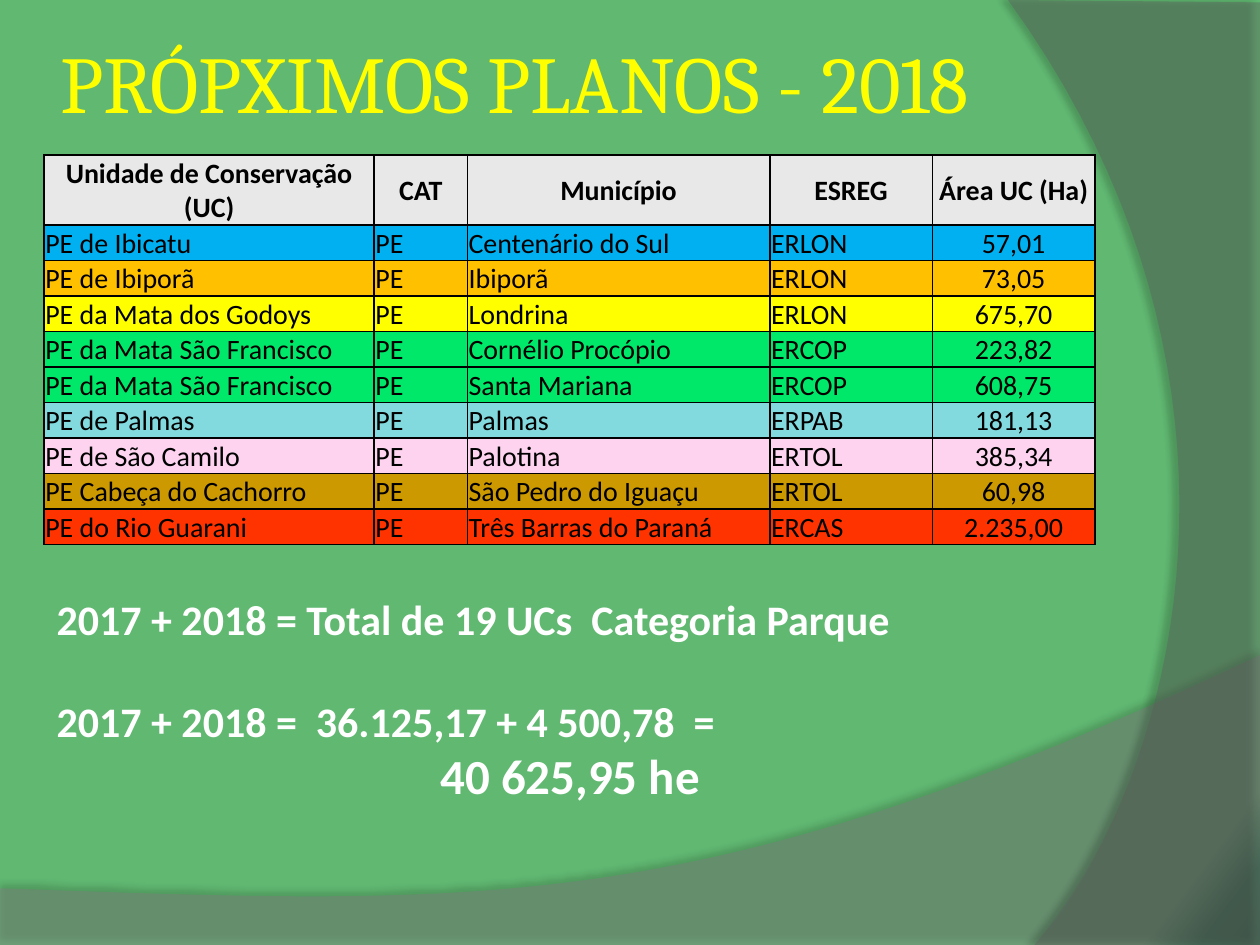
from dataclasses import dataclass

from lxml.etree import SubElement
from pptx import Presentation
from pptx.dml.color import RGBColor
from pptx.enum.text import MSO_ANCHOR, PP_ALIGN
from pptx.oxml import parse_xml
from pptx.oxml.ns import qn
from pptx.util import Pt

DRAW = "http://schemas.openxmlformats.org/drawingml/2006/main"


@dataclass(frozen=True)
class Theme:
    ground: tuple = ((0, "005928"), (3, "006A30"), (6, "60B871"))
    wave: str = "7F7F7F"
    side: str = "5E5E5E"
    dark: str = "000000"
    light: str = "FFFFFF"
    gold: str = "FFFF00"
    head: str = "E8E8E8"
    serif: str = "Cambria"
    sans: str = "Calibri"
    title: int = 46
    cell: int = 16
    note: int = 24
    total: int = 28


def write(par, text, *, size, color, font, bold=False, align=PP_ALIGN.LEFT, before=0):
    par.alignment = align
    par.space_before = Pt(before)
    run = par.add_run()
    run.text = text
    run.font.size = Pt(size)
    run.font.name = font
    run.font.bold = bold
    run.font.color.rgb = RGBColor.from_string(color)


def curve(start, one, two, end, steps=40):
    points = []
    for step in range(steps + 1):
        t = step / steps
        u = 1 - t
        points.append(tuple(
            u**3 * a + 3 * u * u * t * b + 3 * u * t * t * c + t**3 * d
            for a, b, c, d in zip(start, one, two, end)
        ))
    return points


def tint(parent, color, alpha=100):
    node = SubElement(parent, qn("a:srgbClr"), val=color)
    SubElement(node, qn("a:alpha"), val=str(alpha * 1000))


class Board:
    """Draws styled elements on the current slide."""

    def __init__(self, slide, theme):
        self.slide = slide
        self.theme = theme

    def ground(self, angle):
        stops = "".join(
            f'<a:gs pos="{pos * 1000}"><a:srgbClr val="{color}"/></a:gs>'
            for pos, color in self.theme.ground
        )
        fill = self.slide.background.fill
        fill.solid()
        old = self.slide.background._cSld.bg.bgPr.find(qn("a:solidFill"))
        old.getparent().replace(old, parse_xml(
            f'<a:gradFill xmlns:a="{DRAW}" rotWithShape="1"><a:gsLst>{stops}</a:gsLst>'
            f'<a:lin ang="{angle * 60000}" scaled="0"/></a:gradFill>'
        ))

    def sweep(self, points, color, alpha, shade, gap, angle):
        spots = [(Pt(x), Pt(y)) for x, y in points]
        path = self.slide.shapes.build_freeform(*spots[0])
        path.add_line_segments(spots[1:], close=True)
        shape = path.convert_to_shape()
        shape.fill.solid()
        shape.fill.fore_color.rgb = RGBColor.from_string(color)
        shape.line.fill.background()
        shape.shadow.inherit = False
        props = shape._element.spPr
        base = props.find(qn("a:solidFill")).find(qn("a:srgbClr"))
        SubElement(base, qn("a:alpha"), val=str(alpha * 1000))
        glow = SubElement(
            props.find(qn("a:effectLst")), qn("a:outerShdw"),
            blurRad=str(Pt(4)), dist=str(Pt(gap)), dir=str(angle * 60000),
            algn="ctr", rotWithShape="0",
        )
        tint(glow, self.theme.dark, shade)

    def box(self, left, top, width, height, lines, anchor=MSO_ANCHOR.TOP, inset=(7.2, 3.6)):
        frame = self.slide.shapes.add_textbox(
            Pt(left), Pt(top), Pt(width), Pt(height)
        ).text_frame
        frame.word_wrap = True
        frame.vertical_anchor = anchor
        frame.margin_left = frame.margin_right = Pt(inset[0])
        frame.margin_top = frame.margin_bottom = Pt(inset[1])
        for index, (text, style) in enumerate(lines):
            par = frame.add_paragraph() if index else frame.paragraphs[0]
            write(par, text, **style)

    def cell(self, cell, text, fill, bold, align):
        props = cell._tc.get_or_add_tcPr()
        for side in ("lnL", "lnR", "lnT", "lnB"):
            line = SubElement(props, qn(f"a:{side}"), w=str(Pt(1)))
            tint(SubElement(line, qn("a:solidFill")), self.theme.dark)
        cell.fill.solid()
        cell.fill.fore_color.rgb = RGBColor.from_string(fill)
        cell.vertical_anchor = MSO_ANCHOR.MIDDLE
        cell.margin_left = cell.margin_right = cell.margin_top = Pt(0.72)
        cell.margin_bottom = Pt(0)
        write(cell.text_frame.paragraphs[0], text, size=self.theme.cell,
              color=self.theme.dark, font=self.theme.sans, bold=bold, align=align)

    def table(self, left, top, widths, heights, rows, fills):
        table = self.slide.shapes.add_table(
            len(rows), len(widths), Pt(left), Pt(top), Pt(sum(widths)), Pt(sum(heights))
        ).table
        table.first_row = table.horz_banding = False
        for col, width in zip(table.columns, widths):
            col.width = Pt(width)
        for row, height in zip(table.rows, heights):
            row.height = Pt(height)
        for r, (row, fill) in enumerate(zip(rows, fills)):
            for c, text in enumerate(row):
                mid = r == 0 or c == len(row) - 1
                align = PP_ALIGN.CENTER if mid else PP_ALIGN.LEFT
                self.cell(table.cell(r, c), text, fill, r == 0, align)


HEAD = ("Unidade de Conservação (UC)", "CAT", "Município", "ESREG", "Área UC (Ha)")
PARKS = (
    ("PE de Ibicatu", "Centenário do Sul", "ERLON", "57,01", "00B0F0"),
    ("PE de Ibiporã", "Ibiporã", "ERLON", "73,05", "FFC000"),
    ("PE da Mata dos Godoys", "Londrina", "ERLON", "675,70", "FFFF00"),
    ("PE da Mata São Francisco", "Cornélio Procópio", "ERCOP", "223,82", "00E869"),
    ("PE da Mata São Francisco", "Santa Mariana", "ERCOP", "608,75", "00E869"),
    ("PE de Palmas", "Palmas", "ERPAB", "181,13", "82DADE"),
    ("PE de São Camilo", "Palotina", "ERTOL", "385,34", "FDD3EF"),
    ("PE Cabeça do Cachorro", "São Pedro do Iguaçu", "ERTOL", "60,98", "CC9900"),
    ("PE do Rio Guarani", "Três Barras do Paraná", "ERCAS", "2.235,00", "FF3300"),
)


def main():
    deck = Presentation()
    deck.slide_width, deck.slide_height = Pt(720), Pt(540)
    theme = Theme()
    board = Board(deck.slides.add_slide(deck.slide_layouts[6]), theme)

    board.ground(217)
    wave = curve((720, 374.4), (402.5, 524.9), (281.5, 517.7), (0, 507.6))
    board.sweep([(0, 540), (720, 540)] + wave, theme.wave, 45, 35, 3.5, 270)
    side = curve((591.1, 540), (673.2, 445.7), (733, 216), (576, 0))
    board.sweep([(720, 1.4), (720, 540)] + side, theme.side, 40, 45, 4, 180)

    title = dict(size=theme.title, color=theme.gold, font=theme.serif)
    board.box(31, 1.4, 588.2, 90, [("PRÓPXIMOS PLANOS - 2018", title)],
              MSO_ANCHOR.MIDDLE, (3.6, 3.6))

    rows = [HEAD] + [(name, "PE", town, unit, area) for name, town, unit, area, _ in PARKS]
    fills = [theme.head] + [park[-1] for park in PARKS]
    board.table(25.2, 88.6, (188.6, 53.3, 172.8, 92.9, 92.9),
                [40] + [20.3] * len(PARKS), rows, fills)

    note = dict(size=theme.note, color=theme.light, font=theme.sans, bold=True)
    board.box(25.2, 335.5, 601.2, 128.2, [
        ("2017 + 2018 = Total de 19 UCs  Categoria Parque", note),
        ("2017 + 2018 =  36.125,17 + 4 500,78  =", note | dict(before=29.3)),
        ("40 625,95 he", note | dict(size=theme.total, align=PP_ALIGN.CENTER)),
    ])
    deck.save("out.pptx")


if __name__ == "__main__":
    main()
